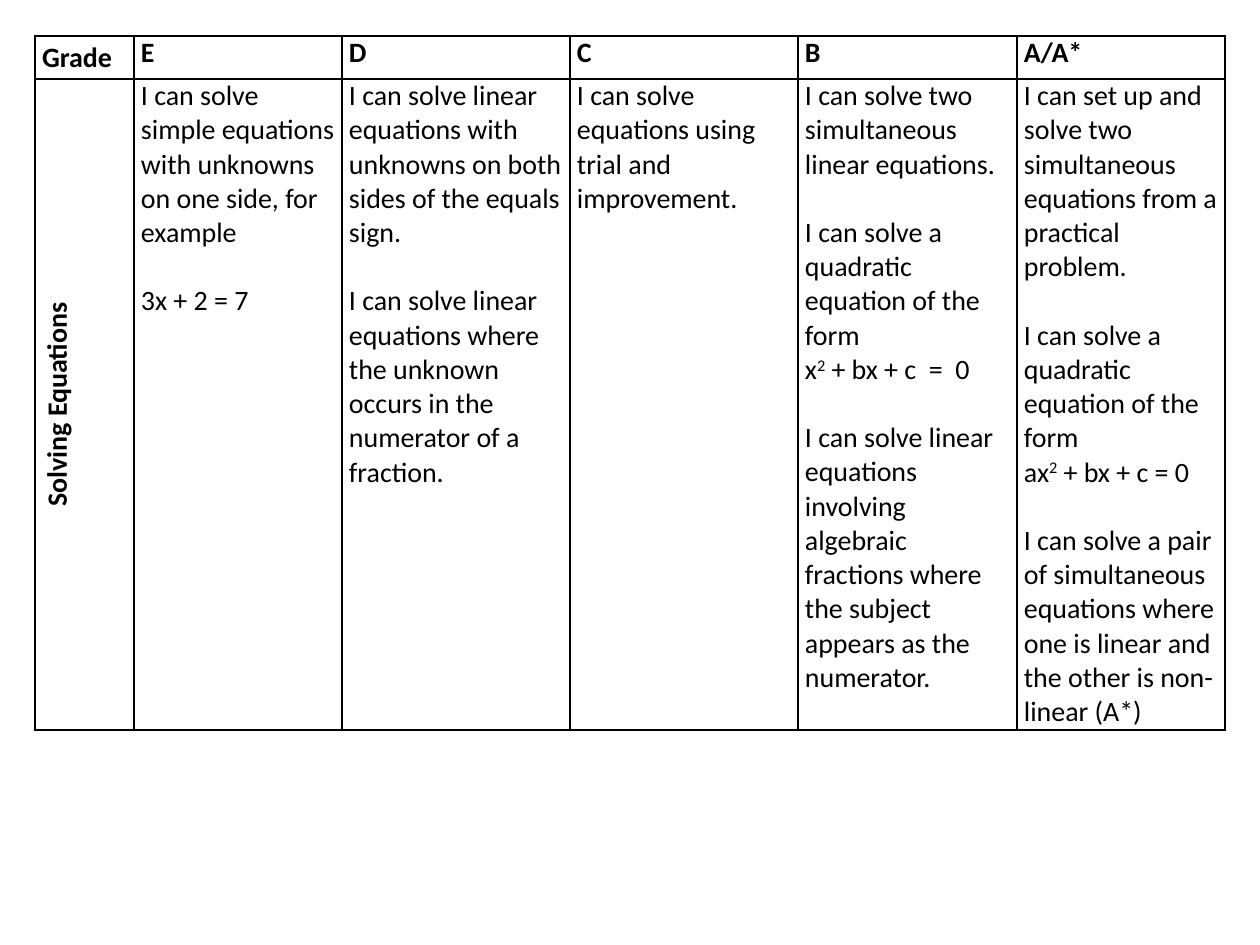
"""Builds a slide with a table of equation-solving targets by grade."""
from lxml import etree
from pptx import Presentation
from pptx.dml.color import RGBColor
from pptx.enum.text import PP_ALIGN
from pptx.oxml.ns import qn
from pptx.util import Emu, Pt

CENTER = PP_ALIGN.CENTER
COLORS = {"ink": "000000"}
FONT, FONT_SIZE, BLOCK_GAP = "Calibri", 16, 19.5
LABEL_SPACING = 1.15
PX = 914400 / 126
SLIDE_SIZE = (1260, 945)
TABLE_ORIGIN = (35, 36)
COLUMN_WIDTHS = (99, 208, 228, 228, 219, 208)
ROW_HEIGHTS = (43, 651)
CELL_INSET = 7
BORDER_SIDES = ("a:lnL", "a:lnR", "a:lnT", "a:lnB")

CORNER, ROW_LABEL = "Grade", "Solving Equations"
TARGETS = {
    "E": [
        ["I can solve simple equations with unknowns on one side, for example"],
        ["3x + 2 = 7"],
    ],
    "D": [
        ["I can solve linear equations with unknowns on both sides of the equals sign."],
        ["I can solve linear equations where the unknown occurs in the numerator of a fraction."],
    ],
    "C": [["I can solve equations using trial and improvement."]],
    "B": [
        ["I can solve two simultaneous linear equations."],
        ["I can solve a quadratic equation of the form", "x² + bx + c  =  0"],
        ["I can solve linear equations involving algebraic fractions where the subject "
         "appears as the numerator."],
    ],
    "A/A*": [
        ["I can set up and solve two simultaneous equations from a practical problem."],
        ["I can solve a quadratic equation of the form", "ax² + bx + c = 0"],
        ["I can solve a pair of simultaneous equations where one is linear and the other "
         "is non-linear (A*)"],
    ],
}


def px(length):
    return Emu(round(length * PX))


def add_text(paragraph, text):
    before, square, after = text.partition("²")
    paragraph.add_run().text = before
    if square:
        exponent = paragraph.add_run()
        exponent.text = "2"
        exponent._r.get_or_add_rPr().set("baseline", "30000")
        paragraph.add_run().text = after


def add_borders(cell):
    properties = cell._tc.get_or_add_tcPr()
    for index, side in enumerate(BORDER_SIDES):
        line = etree.Element(qn(side), w=str(Pt(1)))
        fill = etree.SubElement(line, qn("a:solidFill"))
        etree.SubElement(fill, qn("a:srgbClr"), val=COLORS["ink"])
        properties.insert(index, line)


def fill_cell(cell, blocks, bold=False):
    cell.fill.background()
    add_borders(cell)
    cell.margin_left = cell.margin_right = px(CELL_INSET)
    cell.margin_top = cell.margin_bottom = 0
    lines = [(text, position == 0) for block in blocks for position, text in enumerate(block)]
    for index, (text, starts_block) in enumerate(lines):
        frame = cell.text_frame
        paragraph = frame.add_paragraph() if index else frame.paragraphs[0]
        add_text(paragraph, text)
        paragraph.space_before = Pt(BLOCK_GAP if index and starts_block else 0)
        font = paragraph.font
        font.name, font.size, font.bold = FONT, Pt(FONT_SIZE), bold
        font.color.rgb = RGBColor.from_string(COLORS["ink"])


def add_target_table(slide):
    table = slide.shapes.add_table(
        len(ROW_HEIGHTS), len(COLUMN_WIDTHS), *map(px, TABLE_ORIGIN),
        px(sum(COLUMN_WIDTHS)), px(sum(ROW_HEIGHTS))).table
    table.first_row = table.horz_banding = False
    for column, width in zip(table.columns, COLUMN_WIDTHS):
        column.width = px(width)
    for row, height in zip(table.rows, ROW_HEIGHTS):
        row.height = px(height)

    for row, label in enumerate((CORNER, ROW_LABEL)):
        fill_cell(table.cell(row, 0), [[label]], bold=True)
        table.cell(row, 0).text_frame.paragraphs[0].line_spacing = LABEL_SPACING
    side_cell = table.cell(1, 0)
    side_cell.text_frame.paragraphs[0].alignment = CENTER
    side_cell._tc.get_or_add_tcPr().set("vert", "vert270")

    for column, (grade, blocks) in enumerate(TARGETS.items(), start=1):
        fill_cell(table.cell(0, column), [[grade]], bold=True)
        fill_cell(table.cell(1, column), blocks)


def main():
    presentation = Presentation()
    presentation.slide_width, presentation.slide_height = map(px, SLIDE_SIZE)
    slide = presentation.slides.add_slide(presentation.slide_layouts[6])
    add_target_table(slide)
    presentation.save("out.pptx")


if __name__ == "__main__":
    main()
